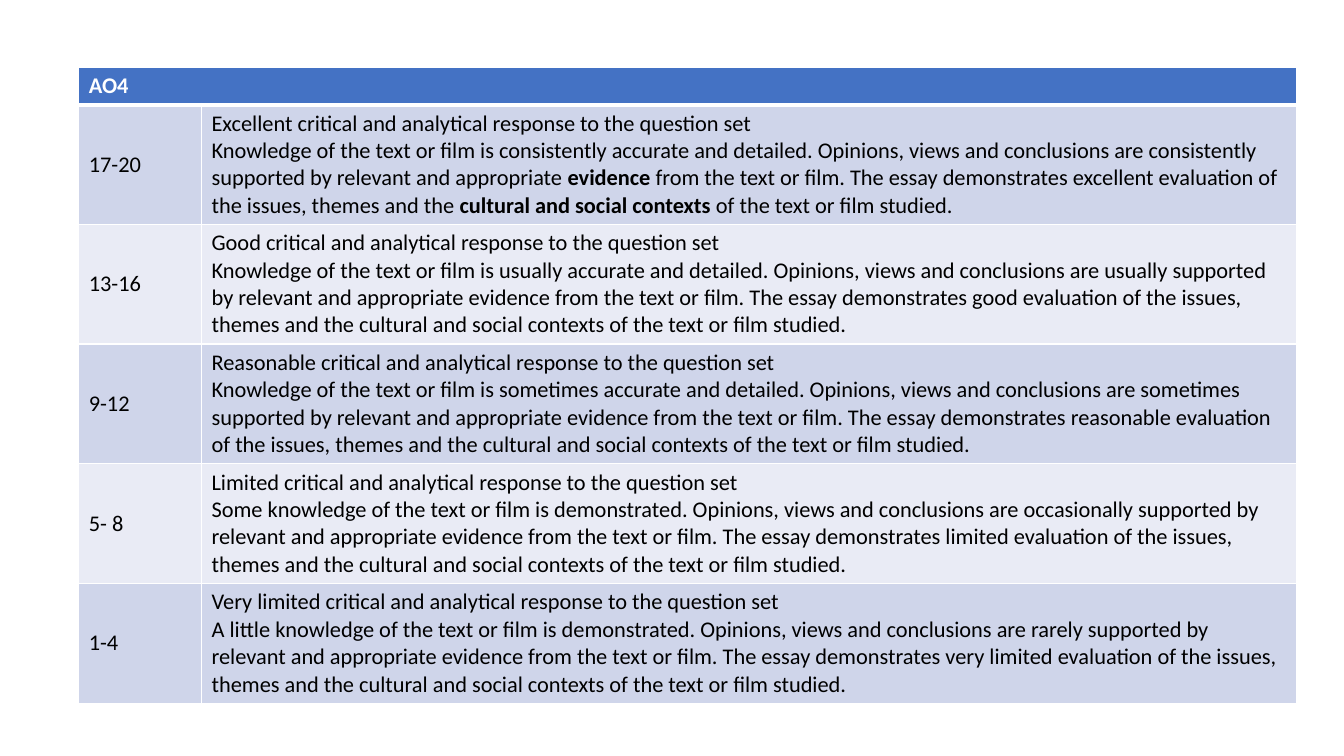
from dataclasses import dataclass

from lxml import etree
from pptx import Presentation
from pptx import util as u
from pptx.dml.color import RGBColor
from pptx.enum import text
from pptx.oxml.ns import qn

PX = 9525


@dataclass(frozen=True)
class Theme:
    """Colours and type sizes of the slide."""
    font: str = "Calibri"
    size: int = 16
    header_fill: str = "4472C4"
    band_fills: tuple = ("CFD5EA", "E9EBF5")
    light: str = "FFFFFF"
    dark: str = "000000"
    rule: int = 1
    header_rule: int = 3


THEME = Theme()
RESPONSE = " critical and analytical response to the question set"
BANDS = [
    ("17-20", "Excellent" + RESPONSE,
     "Knowledge of the text or film is consistently accurate and detailed. Opinions, views and "
     "conclusions are consistently supported by relevant and appropriate **evidence **from the text "
     "or film. The essay demonstrates excellent evaluation of the issues, themes and the** cultural "
     "and social contexts** of the text or film studied."),
    ("13-16", "Good" + RESPONSE,
     "Knowledge of the text or film is usually accurate and detailed. Opinions, views and "
     "conclusions are usually supported by relevant and appropriate evidence from the text or film. "
     "The essay demonstrates good evaluation of the issues, themes and the cultural and social "
     "contexts of the text or film studied."),
    ("9-12", "Reasonable" + RESPONSE,
     "Knowledge of the text or film is sometimes accurate and detailed. Opinions, views and "
     "conclusions are sometimes supported by relevant and appropriate evidence from the text or "
     "film. The essay demonstrates reasonable evaluation of the issues, themes and the cultural and "
     "social contexts of the text or film studied."),
    ("5- 8", "Limited" + RESPONSE,
     "Some knowledge of the text or film is demonstrated. Opinions, views and conclusions are "
     "occasionally supported by relevant and appropriate evidence from the text or film. The essay "
     "demonstrates limited evaluation of the issues, themes and the cultural and social contexts of "
     "the text or film studied."),
    ("1-4", "Very limited" + RESPONSE,
     "A little knowledge of the text or film is demonstrated. Opinions, views and conclusions are "
     "rarely supported by relevant and appropriate evidence from the text or film. The essay "
     "demonstrates very limited evaluation of the issues, themes and the cultural and social "
     "contexts of the text or film studied."),
]


def set_borders(cell, top, bottom):
    """Draw the light rules around a cell, with widths in points."""
    properties = cell._tc.get_or_add_tcPr()
    widths = {"a:lnL": THEME.rule, "a:lnR": THEME.rule, "a:lnT": top, "a:lnB": bottom}
    for index, (tag, width) in enumerate(widths.items()):
        line = etree.Element(qn(tag), w=str(u.Pt(width)))
        fill = etree.SubElement(line, qn("a:solidFill"))
        etree.SubElement(fill, qn("a:srgbClr"), val=THEME.light)
        properties.insert(index, line)


def style_cell(cell, fill, top=THEME.rule, bottom=THEME.rule):
    """Give a cell its fill, borders and anchor."""
    cell.fill.solid()
    cell.fill.fore_color.rgb = RGBColor.from_string(fill)
    cell.vertical_anchor = text.MSO_ANCHOR.MIDDLE
    set_borders(cell, top, bottom)


def write_cell(cell, lines, color, bold=False):
    """Write one paragraph per line, with ** around bold words."""
    frame = cell.text_frame
    for index, line in enumerate(lines):
        paragraph = frame.add_paragraph() if index else frame.paragraphs[0]
        paragraph.font.name = THEME.font
        paragraph.font.size = u.Pt(THEME.size)
        paragraph.font.color.rgb = RGBColor.from_string(color)
        paragraph.font.bold = bold
        for part, words in enumerate(line.split("**")):
            run = paragraph.add_run()
            run.text = words
            if part % 2:
                run.font.bold = True


def add_mark_table(slide, left, top, width, height, header_height=35, mark_width=117):
    """Place the mark bands in a table that fills the given box."""
    table = slide.shapes.add_table(
        len(BANDS) + 1, 2, left * PX, top * PX, width * PX, height * PX).table
    table.columns[0].width = mark_width * PX
    table.columns[1].width = (width - mark_width) * PX
    table.rows[0].height = header_height * PX
    band_height = (height - header_height) // len(BANDS)

    for cell in table.rows[0].cells:
        style_cell(cell, THEME.header_fill, bottom=THEME.header_rule)
    header = table.cell(0, 0)
    header.merge(table.cell(0, 1))
    write_cell(header, ["AO4"], THEME.light, bold=True)

    for index, (marks, *description) in enumerate(BANDS):
        row = table.rows[index + 1]
        row.height = band_height * PX
        fill = THEME.band_fills[index % len(THEME.band_fills)]
        for cell, lines in zip(row.cells, ([marks], description)):
            style_cell(cell, fill, top=THEME.rule if index else THEME.header_rule)
            write_cell(cell, lines, THEME.dark)


def main():
    """Build the slide and save it."""
    presentation = Presentation()
    presentation.slide_width = 1280 * PX
    presentation.slide_height = 720 * PX
    slide = presentation.slides.add_slide(presentation.slide_layouts[6])
    add_mark_table(slide, 75, 64, 1160, 605)
    presentation.save("out.pptx")


if __name__ == "__main__":
    main()
